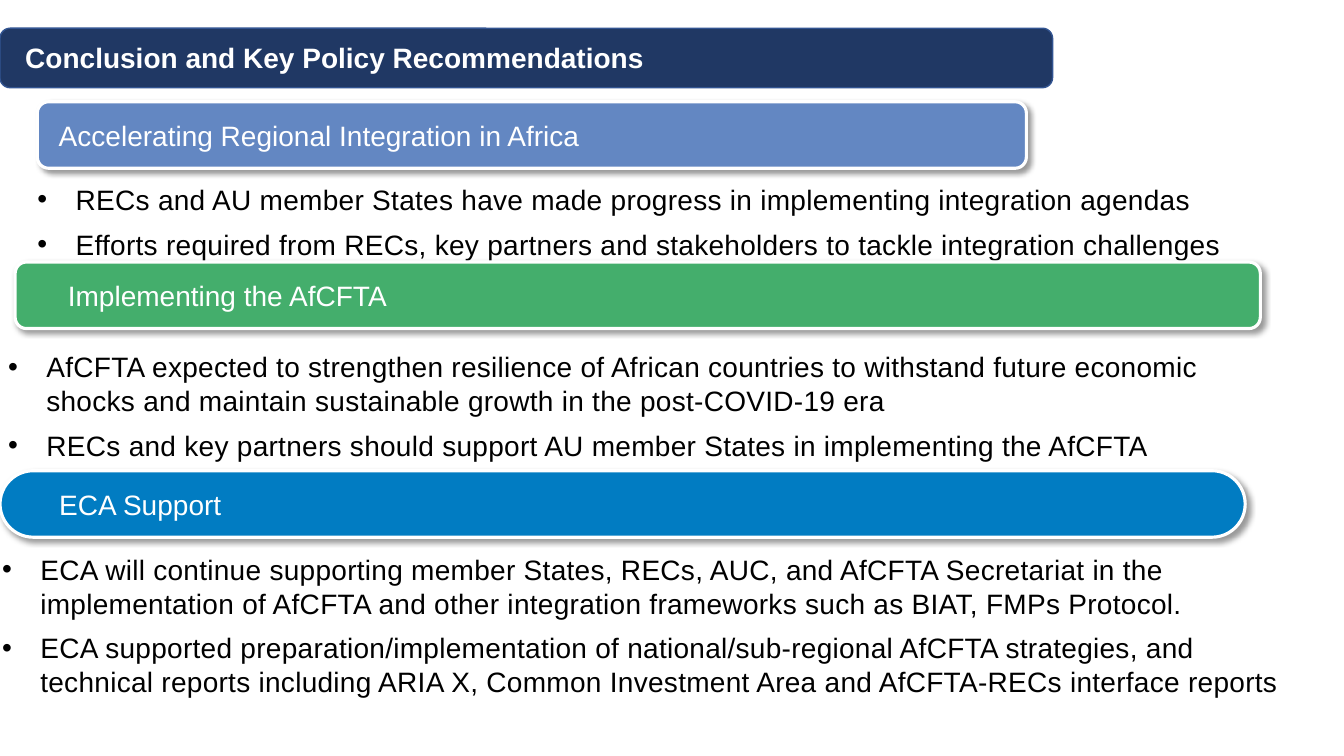
from lxml import etree
from pptx import Presentation, util as u
from pptx.dml.color import RGBColor
from pptx.enum import shapes, text
from pptx.oxml.ns import qn

TITLE = "Conclusion and Key Policy Recommendations"
TITLE_BAR = (0, 0.28, 10.44, 0.59)
TITLE_BOX = (0.15, 0.35, 9.12, 0.44)
BAR_HEIGHT = 0.66
SECTIONS = [
    dict(
        heading="Accelerating Regional Integration in Africa",
        bar=(0.37, 1.01, 9.81), color="6387C2", indent=0.18, rounding=0.17,
        body=(0.37, 1.81, 12.59, 0.79), placeholder=1,
        points=[
            "RECs and AU member States have made progress in implementing integration agendas",
            "Efforts required from RECs, key partners and stakeholders to tackle integration challenges",
        ],
    ),
    dict(
        heading="Implementing the AfCFTA",
        bar=(0.15, 2.6, 12.35), color="44AE6C", indent=0.49, rounding=0.17,
        body=(0.08, 3.47, 12.59, 1.12), placeholder=2,
        points=[
            "AfCFTA expected to strengthen resilience of African countries to withstand future economic shocks and maintain sustainable growth in the post-COVID-19 era",
            "RECs and key partners should support AU member States in implementing the AfCFTA",
        ],
    ),
    dict(
        heading="ECA Support",
        bar=(0, 4.67, 12.35), color="017CC2", indent=0.49, rounding=0.5,
        body=(0.02, 5.48, 12.94, 1.46), placeholder=4,
        points=[
            "ECA will continue supporting member States, RECs, AUC, and AfCFTA Secretariat in the implementation of AfCFTA and other integration frameworks such as BIAT, FMPs Protocol.",
            "ECA supported preparation/implementation of national/sub-regional AfCFTA strategies, and technical reports including ARIA X, Common Investment Area and AfCFTA-RECs interface reports",
        ],
    ),
]


def rgb(color):
    return RGBColor.from_string(color)


def place(shape, box):
    shape.left, shape.top, shape.width, shape.height = map(u.Inches, box)


def format_font(font, color, bold=False):
    font.name, font.size, font.bold = "Arial", u.Pt(20), bold
    font.color.rgb = rgb(color)


def set_frame(frame, anchor, side=0, top=0):
    frame.word_wrap = True
    frame.auto_size = text.MSO_AUTO_SIZE.NONE
    frame.vertical_anchor = anchor
    frame.margin_left = frame.margin_right = u.Inches(side)
    frame.margin_top = frame.margin_bottom = u.Inches(top)


def add_bar(slide, box, fill, line, width, rounding=0.17):
    bar = slide.shapes.add_shape(
        shapes.MSO_SHAPE.ROUNDED_RECTANGLE, *map(u.Inches, box))
    bar.adjustments[0] = rounding
    bar.shadow.inherit = False
    bar.fill.solid()
    bar.fill.fore_color.rgb = rgb(fill)
    bar.line.color.rgb = rgb(line)
    bar.line.width = u.Pt(width)
    return bar


def add_shadow(shape):
    effects = shape._element.spPr.find(qn("a:effectLst"))
    shadow = etree.SubElement(
        effects, qn("a:outerShdw"), blurRad=str(u.Pt(4)), dist=str(u.Pt(3)),
        dir=str(45 * 60000), algn="tl", rotWithShape="0")
    color = etree.SubElement(shadow, qn("a:srgbClr"), val="000000")
    etree.SubElement(color, qn("a:alpha"), val="40000")


def add_title(slide):
    add_bar(slide, TITLE_BAR, "203864", "325491", 1)
    title = slide.shapes.title
    slide.shapes._spTree.append(title._element)
    place(title, TITLE_BOX)
    set_frame(title.text_frame, text.MSO_ANCHOR.TOP, 0.1, 0.05)
    title.text_frame.text = TITLE
    paragraph = title.text_frame.paragraphs[0]
    paragraph.alignment = text.PP_ALIGN.LEFT
    format_font(paragraph.runs[0].font, "FFFFFF", True)


def add_heading(slide, section):
    bar = add_bar(slide, (*section["bar"], BAR_HEIGHT), section["color"],
                  "FFFFFF", 2.25, section["rounding"])
    add_shadow(bar)
    frame = bar.text_frame
    set_frame(frame, text.MSO_ANCHOR.MIDDLE, 0.1, 0.05)
    frame.margin_left = u.Inches(section["indent"])
    frame.text = section["heading"]
    frame.paragraphs[0].alignment = text.PP_ALIGN.LEFT
    format_font(frame.paragraphs[0].runs[0].font, "FFFFFF")


def add_points(slide, section):
    body = slide.placeholders[section["placeholder"]]
    place(body, section["body"])
    frame = body.text_frame
    set_frame(frame, text.MSO_ANCHOR.TOP)
    frame.text = "\n".join(section["points"])
    for number, paragraph in enumerate(frame.paragraphs):
        properties = paragraph._p.get_or_add_pPr()
        properties.set("marL", str(u.Inches(0.38)))
        properties.set("indent", str(-u.Inches(0.38)))
        etree.SubElement(properties, qn("a:buFont"), typeface="Arial")
        etree.SubElement(properties, qn("a:buChar"), char="•")
        paragraph.space_before = u.Pt(8 if number else 0)
        run = paragraph.runs[0]
        format_font(run.font, "000000")
        run._r.get_or_add_rPr().set("spc", "20")


def main():
    presentation = Presentation()
    presentation.slide_width = u.Inches(13.33)
    presentation.slide_height = u.Inches(7.5)
    slide = presentation.slides.add_slide(presentation.slide_layouts[4])
    add_title(slide)
    for section in SECTIONS:
        add_heading(slide, section)
        add_points(slide, section)
    for placeholder in list(slide.placeholders):
        if not placeholder.text_frame.text:
            slide.shapes._spTree.remove(placeholder._element)
    presentation.save("out.pptx")


if __name__ == "__main__":
    main()
